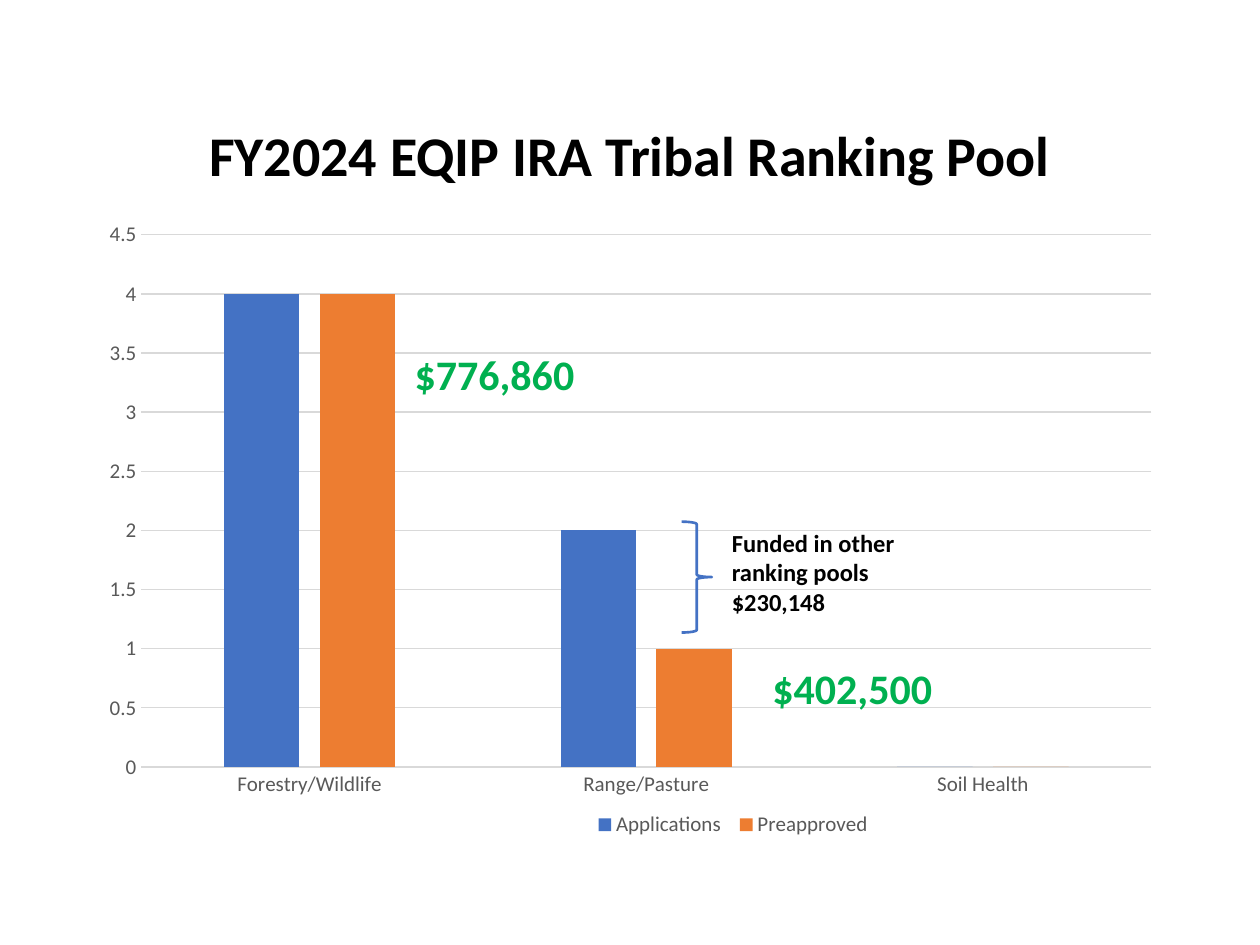
from lxml import etree
from pptx import Presentation
from pptx.chart.data import CategoryChartData
from pptx.dml.color import RGBColor
from pptx.enum.chart import XL_CHART_TYPE, XL_LEGEND_POSITION, XL_TICK_MARK
from pptx.enum.shapes import MSO_SHAPE
from pptx.enum.text import MSO_ANCHOR, PP_ALIGN
from pptx.oxml.ns import qn
from pptx.util import Inches, Pt

BLACK, GREEN, GRAY, LIGHT = "000000", "00B050", "595959", "D9D9D9"
BLUE, ORANGE = "4472C4", "ED7D31"


def colour(value):
    return RGBColor.from_string(value)


def set_layout(parent, following, target=None, **fractions):
    for layout in parent.findall(qn("c:layout")):
        parent.remove(layout)
    layout = etree.Element(qn("c:layout"))
    manual = etree.SubElement(layout, qn("c:manualLayout"))
    settings = {"layoutTarget": target} if target else {}
    settings.update(xMode="edge", yMode="edge", **fractions)
    for name, value in settings.items():
        etree.SubElement(manual, qn(f"c:{name}")).set("val", str(value))
    parent.find(qn(following)).addprevious(layout)


class SlideBuilder:
    font_name = "Calibri"

    def __init__(self, page):
        self.page = page

    def style_font(self, font, size, value, bold=False):
        font.name = self.font_name
        font.size = Pt(size)
        font.bold = bold
        font.color.rgb = colour(value)

    def style_line(self, line, value, width):
        line.color.rgb = colour(value)
        line.width = Pt(width)

    def add_text(self, text, left, top, width, height, size, value=BLACK,
                 align=PP_ALIGN.CENTER, anchor=MSO_ANCHOR.TOP, spacing=1.0):
        box = self.page.shapes.add_textbox(
            Inches(left), Inches(top), Inches(width), Inches(height))
        frame = box.text_frame
        frame.word_wrap = True
        frame.vertical_anchor = anchor
        para = frame.paragraphs[0]
        para.text = text
        para.alignment = align
        para.line_spacing = spacing
        self.style_font(para.font, size, value, bold=True)

    def add_brace(self, left, top, width, height):
        brace = self.page.shapes.add_shape(
            MSO_SHAPE.RIGHT_BRACE,
            Inches(left), Inches(top), Inches(width), Inches(height))
        brace.shadow.inherit = False
        brace.fill.background()
        self.style_line(brace.line, BLUE, 1.5)

    def add_columns(self, categories, series, left, top, width, height):
        data = CategoryChartData()
        data.categories = categories
        for name, values, _ in series:
            data.add_series(name, values)
        chart = self.page.shapes.add_chart(
            XL_CHART_TYPE.COLUMN_CLUSTERED, Inches(left), Inches(top),
            Inches(width), Inches(height), data).chart
        chart.has_title = False
        self.style_font(chart.font, 10, BLACK)

        plot = chart.plots[0]
        plot.vary_by_categories = False
        plot.gap_width, plot.overlap = 219, -27
        for bars, (_, _, value) in zip(plot.series, series):
            bars.format.fill.solid()
            bars.format.fill.fore_color.rgb = colour(value)

        for axis in (chart.category_axis, chart.value_axis):
            axis.major_tick_mark = axis.minor_tick_mark = XL_TICK_MARK.NONE
            self.style_font(axis.tick_labels.font, 12, GRAY)
        self.style_line(chart.category_axis.format.line, LIGHT, 0.75)
        value_axis = chart.value_axis
        value_axis.minimum_scale, value_axis.maximum_scale = 0, 4.5
        value_axis.major_unit = 0.5
        value_axis.format.line.fill.background()
        self.style_line(value_axis.major_gridlines.format.line, LIGHT, 0.75)

        chart.has_legend = True
        legend = chart.legend
        legend.position = XL_LEGEND_POSITION.BOTTOM
        legend.include_in_layout = False
        self.style_font(legend.font, 12, GRAY)

        area = chart.element.chart.plotArea
        set_layout(area, "c:barChart", "inner", x=0.05, y=0.04, w=0.93, h=0.83)
        set_layout(area.getparent().find(qn("c:legend")), "c:overlay",
                   x=0.46, y=0.93, w=0.27, h=0.06)


def main():
    deck = Presentation()
    deck.slide_width, deck.slide_height = Inches(10), Inches(7.5)
    slide = SlideBuilder(deck.slides.add_slide(deck.slide_layouts[6]))

    slide.add_text("FY2024 EQIP IRA Tribal Ranking Pool", 0.69, 0.93, 8.62, 0.65,
                   32, anchor=MSO_ANCHOR.MIDDLE, spacing=0.9)
    slide.add_columns(
        ["Forestry/Wildlife", "Range/Pasture", "Soil Health"],
        [("Applications", (4, 2, 0), BLUE), ("Preapproved", (4, 1, 0), ORANGE)],
        0.69, 1.66, 8.62, 5.09)
    for amount, left, top in (("$776,860", 2.69, 2.72), ("$402,500", 5.53, 5.21)):
        slide.add_text(amount, left, top, 2.47, 0.5, 24, GREEN)
    slide.add_brace(5.41, 4.14, 0.24, 0.88)
    slide.add_text("Funded in other ranking pools $230,148",
                   5.71, 4.14, 2.03, 1.04, 14, align=PP_ALIGN.LEFT)

    deck.save("out.pptx")


if __name__ == "__main__":
    main()
